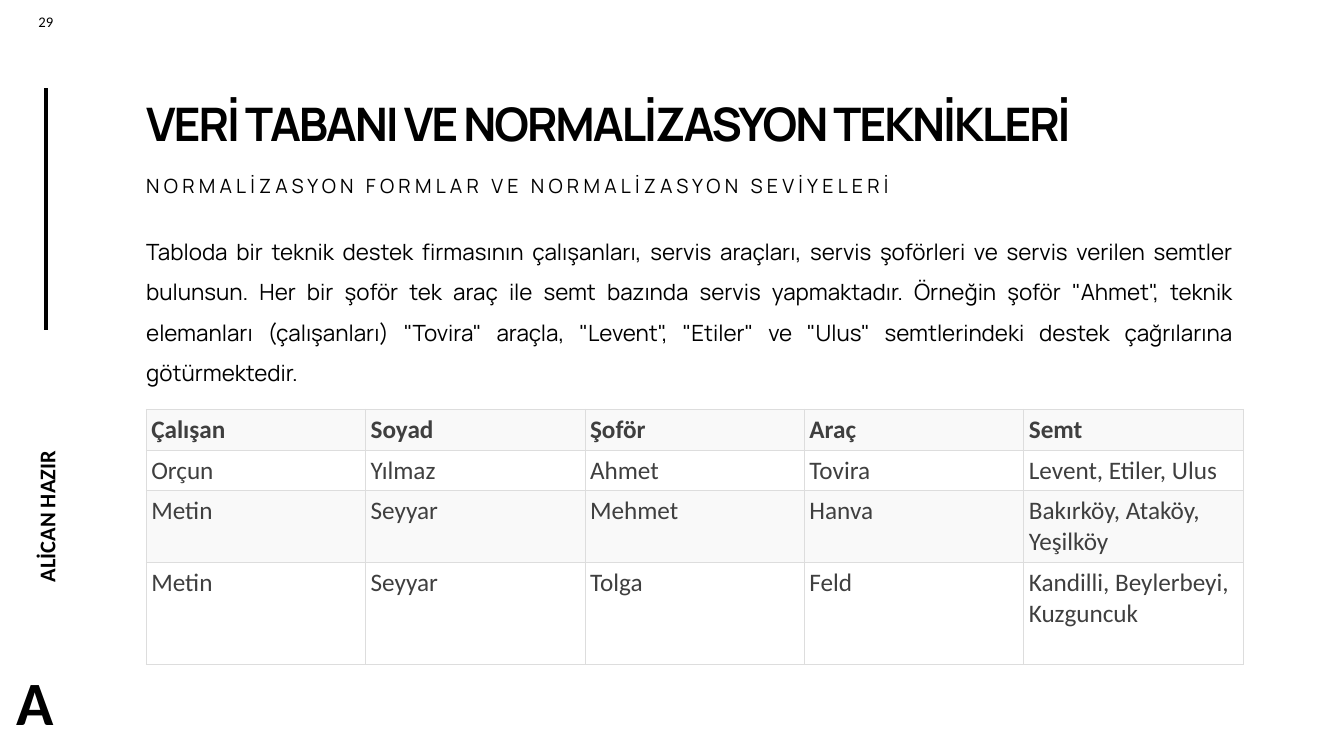
from collections import namedtuple

from lxml import etree
from pptx import Presentation
from pptx import util as u
from pptx.dml.color import RGBColor
from pptx.enum import shapes, text
from pptx.oxml import ns

Box = namedtuple("Box", "left top width height")

COLORS = {"ink": "000000", "cell": "3F3F3F", "band": "F9F9F9", "plain": "FFFFFF", "rule": "DDDDDD"}
BODY_FONT, SIDE_FONT = "Manrope", "Calibri"
TITLE = "VERİ TABANI VE NORMALİZASYON TEKNİKLERİ"
SUBTITLE = "NORMALİZASYON FORMLAR VE NORMALİZASYON SEVİYELERİ"
DESCRIPTION = (
    "Tabloda bir teknik destek firmasının çalışanları, servis araçları, servis şoförleri "
    "ve servis verilen semtler bulunsun. Her bir şoför tek araç ile semt bazında servis "
    "yapmaktadır. Örneğin şoför \"Ahmet\", teknik elemanları (çalışanları) \"Tovira\" araçla, "
    "\"Levent\", \"Etiler\" ve \"Ulus\" semtlerindeki destek çağrılarına götürmektedir."
)
SERVICE_ROWS = [
    ["Çalışan", "Soyad", "Şoför", "Araç", "Semt"],
    ["Orçun", "Yılmaz", "Ahmet", "Tovira", "Levent, Etiler, Ulus"],
    ["Metin", "Seyyar", "Mehmet", "Hanva", "Bakırköy, Ataköy, Yeşilköy"],
    ["Metin", "Seyyar", "Tolga", "Feld", "Kandilli, Beylerbeyi, Kuzguncuk"],
]
ROW_LINES = [1, 1, 2, 3]


def share(box, left, top, width, height):
    """Return the part of a box given by percentages of its size."""
    return Box(
        round(box.left + box.width * left / 100),
        round(box.top + box.height * top / 100),
        round(box.width * width / 100),
        round(box.height * height / 100),
    )


def color(name):
    """Return the named colour."""
    return RGBColor.from_string(COLORS[name])


def style_run(run, font, size, ink="ink", bold=False, spacing=0):
    """Set the font of one run, with letter spacing in points."""
    run.font.name = font
    run.font.size = u.Pt(size)
    run.font.bold = bold
    run.font.color.rgb = color(ink)
    if spacing:
        run._r.get_or_add_rPr().set("spc", str(int(spacing * 100)))


def set_margins(target, left, top, right, bottom):
    """Set the four inner margins of a text frame or cell in inches."""
    target.margin_left, target.margin_top = u.Inches(left), u.Inches(top)
    target.margin_right, target.margin_bottom = u.Inches(right), u.Inches(bottom)


def add_label(slide, box, words, font, size, **run_style):
    """Add a wrapping text box and return it."""
    label = slide.shapes.add_textbox(*box)
    frame = label.text_frame
    frame.word_wrap = True
    frame.text = words
    style_run(frame.paragraphs[0].runs[0], font, size, **run_style)
    return label


def add_tag(slide, box, words, size, rotation=0):
    """Add a bold one-line tag that fits its words."""
    tag = add_label(slide, box, words, SIDE_FONT, size, bold=True)
    tag.rotation = rotation
    frame = tag.text_frame
    frame.word_wrap = False
    frame.auto_size = text.MSO_AUTO_SIZE.SHAPE_TO_FIT_TEXT
    frame.vertical_anchor = text.MSO_ANCHOR.MIDDLE
    set_margins(frame, 0.02, 0.02, 0.02, 0.02)


def add_copy(slide, box, words, size, line_spacing, space_before=0, **run_style):
    """Add a content paragraph flush with the left side of its box."""
    label = add_label(slide, box, words, BODY_FONT, size, **run_style)
    set_margins(label.text_frame, 0, 0.05, 0.1, 0.05)
    paragraph = label.text_frame.paragraphs[0]
    paragraph.line_spacing = line_spacing
    paragraph.space_before = u.Pt(space_before)
    return label


def add_side_rail(slide, box):
    """Draw the page number, rule, author and letter of the left rail."""
    number = add_label(slide, share(box, 11.72, 1.07, 39.31, 3.6), "29", SIDE_FONT, 10.5)
    number.text_frame.paragraphs[0].alignment = text.PP_ALIGN.CENTER
    rule = share(box, 31.72, 11.6, 0, 32)
    line = slide.shapes.add_connector(
        shapes.MSO_CONNECTOR.STRAIGHT, rule.left, rule.top + rule.height, rule.left, rule.top
    )
    line.line.color.rgb = color("ink")
    line.line.width = u.Pt(3)
    etree.SubElement(line._element.spPr, ns.qn("a:effectLst"))
    add_tag(slide, share(box, -28.97, 63.47, 121.38, 4.13), "ALİCAN HAZIR", 16, rotation=270)
    add_tag(slide, share(box, 9.66, 87.47, 35.86, 10.4), "A", 44)


def add_heading(slide, box):
    """Place the title, subtitle and description."""
    title = add_copy(slide, share(box, 0, 12.27, 100, 8.4), TITLE, 33, 0.9, bold=True, spacing=-1.5)
    title.text_frame.vertical_anchor = text.MSO_ANCHOR.BOTTOM
    add_copy(slide, share(box, 0, 22.67, 85.57, 4.13), SUBTITLE, 14, 0.9, 10, spacing=3)
    description = add_copy(slide, share(box, 0, 29.07, 100, 24.13), DESCRIPTION, 16, 1.5, 10)
    description.text_frame.paragraphs[0].alignment = text.PP_ALIGN.JUSTIFY


def add_borders(cell):
    """Draw thin rules on the four sides of a cell."""
    properties = cell._tc.get_or_add_tcPr()
    for position, side in enumerate(("lnL", "lnR", "lnT", "lnB")):
        border = etree.Element(ns.qn(f"a:{side}"), w=str(u.Pt(0.75)))
        fill = etree.SubElement(border, ns.qn("a:solidFill"))
        etree.SubElement(fill, ns.qn("a:srgbClr"), val=COLORS["rule"])
        properties.insert(position, border)


def add_service_table(slide, box):
    """Build the table of staff, drivers, cars and districts."""
    columns = len(SERVICE_ROWS[0])
    table = slide.shapes.add_table(len(SERVICE_ROWS), columns, *box).table
    for column in table.columns:
        column.width = box.width // columns
    line_height, padding = u.Inches(0.305), u.Inches(0.1)
    for index, (words, lines) in enumerate(zip(SERVICE_ROWS, ROW_LINES)):
        table.rows[index].height = lines * line_height + padding
        for cell, word in zip(table.rows[index].cells, words):
            cell.text = word
            set_margins(cell, 0.05, 0.05, 0.05, 0.05)
            style_run(cell.text_frame.paragraphs[0].runs[0], SIDE_FONT, 18, "cell", bold=index == 0)
            cell.fill.solid()
            cell.fill.fore_color.rgb = color("plain" if index % 2 else "band")
            add_borders(cell)


def main():
    """Build and save the presentation."""
    presentation = Presentation()
    presentation.slide_width, presentation.slide_height = u.Inches(13.33), u.Inches(7.5)
    slide = presentation.slides.add_slide(presentation.slide_layouts[6])
    page = Box(0, 0, presentation.slide_width, presentation.slide_height)
    content = share(page, 10.88, 0, 81.62, 100)
    add_side_rail(slide, share(page, 0, 0, 10.88, 100))
    add_heading(slide, content)
    add_service_table(slide, share(content, 0, 54.13, 100, 34))
    presentation.save("out.pptx")


if __name__ == "__main__":
    main()
